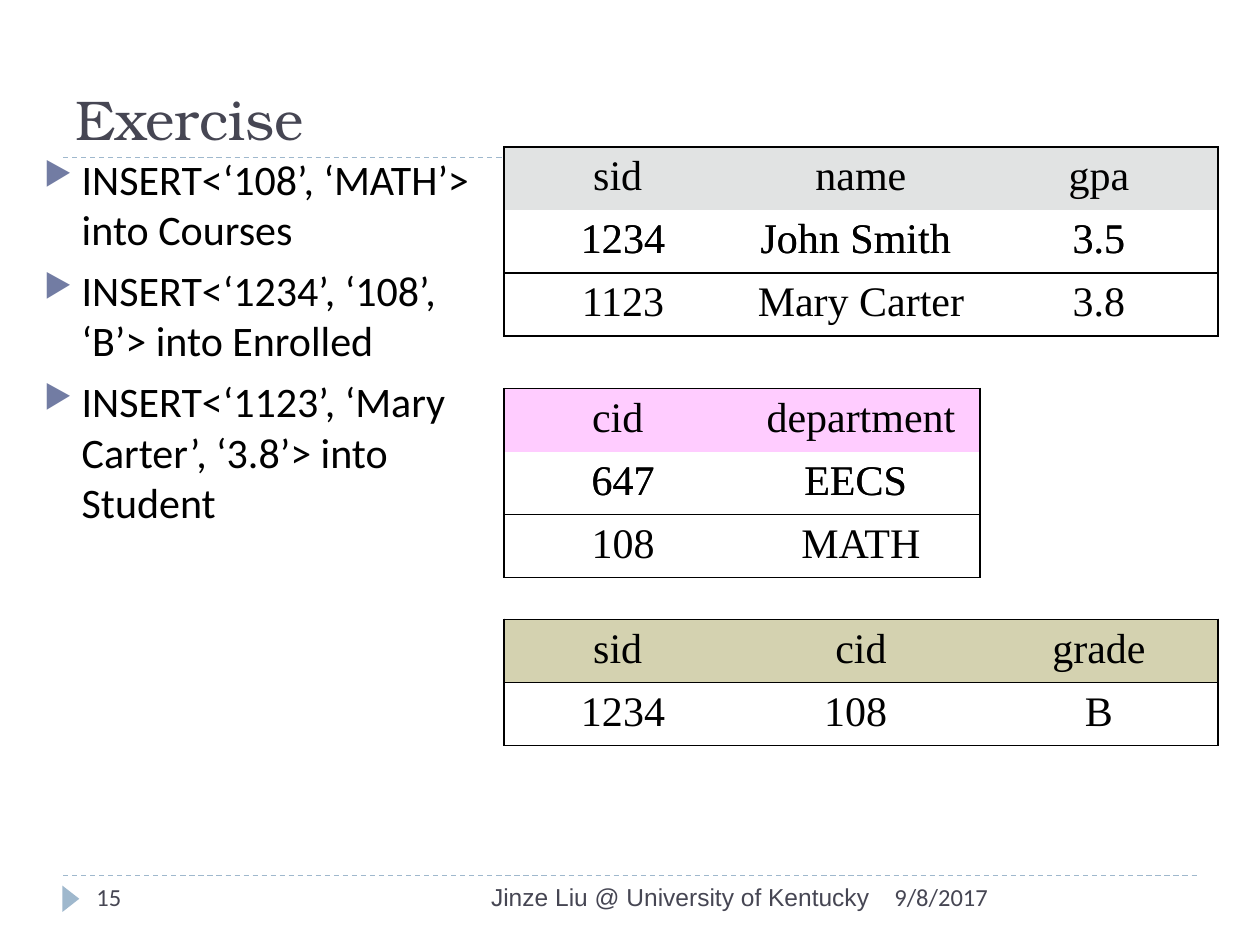
import pptx
import pptx.dml.color
import pptx.enum.dml
import pptx.enum.shapes
import pptx.enum.text
import pptx.oxml
import pptx.oxml.ns
import pptx.util
import lxml.etree

deck = pptx.Presentation()
deck.slide_width = pptx.util.Inches(10)
deck.slide_height = pptx.util.Inches(7.5)
slide = deck.slides.add_slide(deck.slide_layouts[6])
unit = deck.slide_width / 120
align = pptx.enum.text.PP_ALIGN
qn = pptx.oxml.ns.qn


def grid(*cells):
    return [round(cell * unit) for cell in cells]


def paint(color_format, hex_color):
    color_format.rgb = pptx.dml.color.RGBColor.from_string(hex_color)


for rule_y in (83.4, 15):
    rule = slide.shapes.add_connector(
        pptx.enum.shapes.MSO_CONNECTOR.STRAIGHT, *grid(6, rule_y, 114, rule_y))
    paint(rule.line.color, "9FB8CD")
    for key, value in {"width": pptx.util.Pt(0.75),
                       "dash_style": pptx.enum.dml.MSO_LINE.DASH}.items():
        setattr(rule.line, key, value)
    lxml.etree.SubElement(rule._element.spPr, qn("a:effectLst"))

page_marker = slide.shapes.add_shape(
    pptx.enum.shapes.MSO_SHAPE.ISOSCELES_TRIANGLE, *grid(5.5, 84.8, 2.5, 1.6))
page_marker.rotation = 90
page_marker.shadow.inherit = False
page_marker.fill.solid()
paint(page_marker.fill.fore_color, "9FB8CD")
page_marker.line.fill.background()

exercises = [
    "INSERT<‘108’, ‘MATH’> into Courses",
    "INSERT<‘1234’, ‘108’, ‘B’> into Enrolled",
    "INSERT<‘1123’, ‘Mary Carter’, ‘3.8’> into Student",
]
title_font = {"size": pptx.util.Pt(32), "name": "TeX Gyre Bonum"}
footer_font = {"size": pptx.util.Pt(14), "name": "Calibri"}
author_font = {"size": pptx.util.Pt(14), "name": "Arial"}
exercise_font = {"size": pptx.util.Pt(24), "name": "Calibri"}
relation_font = {"size": pptx.util.Pt(24), "name": "Times New Roman"}

passages = [
    ((6, 2, 108, 13), ["Exercise"], title_font, "464653", align.LEFT, "BOTTOM"),
    ((84, 83.4, 30, 4.8), ["9/8/2017"], footer_font, "464653", align.LEFT, "TOP"),
    ((38, 83.4, 46, 4.8), ["Jinze Liu @ University of Kentucky"],
     author_font, "464653", align.RIGHT, "TOP"),
    ((8, 83.4, 26, 4.8), ["15"], footer_font, "464653", align.LEFT, "TOP"),
    ((3, 14, 44, 69), exercises, exercise_font, "000000", align.LEFT, "TOP"),
]
for area, lines, font, color, alignment, anchor in passages:
    frame = slide.shapes.add_textbox(*grid(*area)).text_frame
    frame.word_wrap = True
    frame.vertical_anchor = pptx.enum.text.MSO_ANCHOR[anchor]
    frame.text = "\n".join(lines)
    for paragraph in frame.paragraphs:
        paragraph.alignment = alignment
        for key, value in font.items():
            setattr(paragraph.runs[0].font, key, value)
        paint(paragraph.runs[0].font.color, color)
        if lines is exercises:
            paragraph.space_before = pptx.util.Pt(6)
            properties = paragraph._p.get_or_add_pPr()
            indent = pptx.util.Inches(0.3)
            for key, value in {"marL": indent, "indent": -indent}.items():
                properties.set(key, str(value))
            bullet_color = lxml.etree.SubElement(properties, qn("a:buClr"))
            lxml.etree.SubElement(bullet_color, qn("a:srgbClr"), val="727CA3")
            lxml.etree.SubElement(properties, qn("a:buSzPct"), val="76000")
            lxml.etree.SubElement(properties, qn("a:buChar"), char="▶")

student = (14, "E1E3E3", [["sid ", "name", "gpa"],
                          ["1234", "John Smith ", "3.5"],
                          ["1123", "Mary Carter ", "3.8"]])
courses = (37, "FFCCFF", [["cid ", "department"], ["647", "EECS "], ["108", "MATH"]])
enrolled = (59, "D4D2B0", [["sid ", "cid", "grade"], ["1234", "108 ", "B"]])
stages = [(student, 2), (courses, 3), (enrolled, 2), (courses, 2), (enrolled, 1), (student, 3)]

for (top, header_color, records), row_count in stages:
    column_count = len(records[0])
    relation = slide.shapes.add_table(
        row_count, column_count,
        *grid(48, top, column_count * 68 / 3, row_count * 5)).table
    relation.first_row = relation.horz_banding = False
    for row, record in enumerate(records[:row_count]):
        for column, value in enumerate(record):
            cell = relation.cell(row, column)
            cell.text = value
            paragraph = cell.text_frame.paragraphs[0]
            paragraph.alignment = align.CENTER
            spacing = lxml.etree.SubElement(paragraph._p.get_or_add_pPr(), qn("a:spcBef"))
            lxml.etree.SubElement(spacing, qn("a:spcPct"), val="20000")
            for key, setting in relation_font.items():
                setattr(paragraph.runs[0].font, key, setting)
            paint(paragraph.runs[0].font.color, "000000")
            outer_edges = {"a:lnL": column == 0, "a:lnR": column == column_count - 1,
                           "a:lnT": row == 0, "a:lnB": row == row_count - 1}
            for edge, is_outer in outer_edges.items():
                border = lxml.etree.SubElement(
                    cell._tc.get_or_add_tcPr(), qn(edge), w=str(pptx.util.Pt(1)))
                if is_outer:
                    ink = lxml.etree.SubElement(border, qn("a:solidFill"))
                    lxml.etree.SubElement(ink, qn("a:srgbClr"), val="000000")
                else:
                    lxml.etree.SubElement(border, qn("a:noFill"))
            if row == 0:
                cell.fill.solid()
                paint(cell.fill.fore_color, header_color)
            else:
                cell.fill.background()

deck.save("out.pptx")
